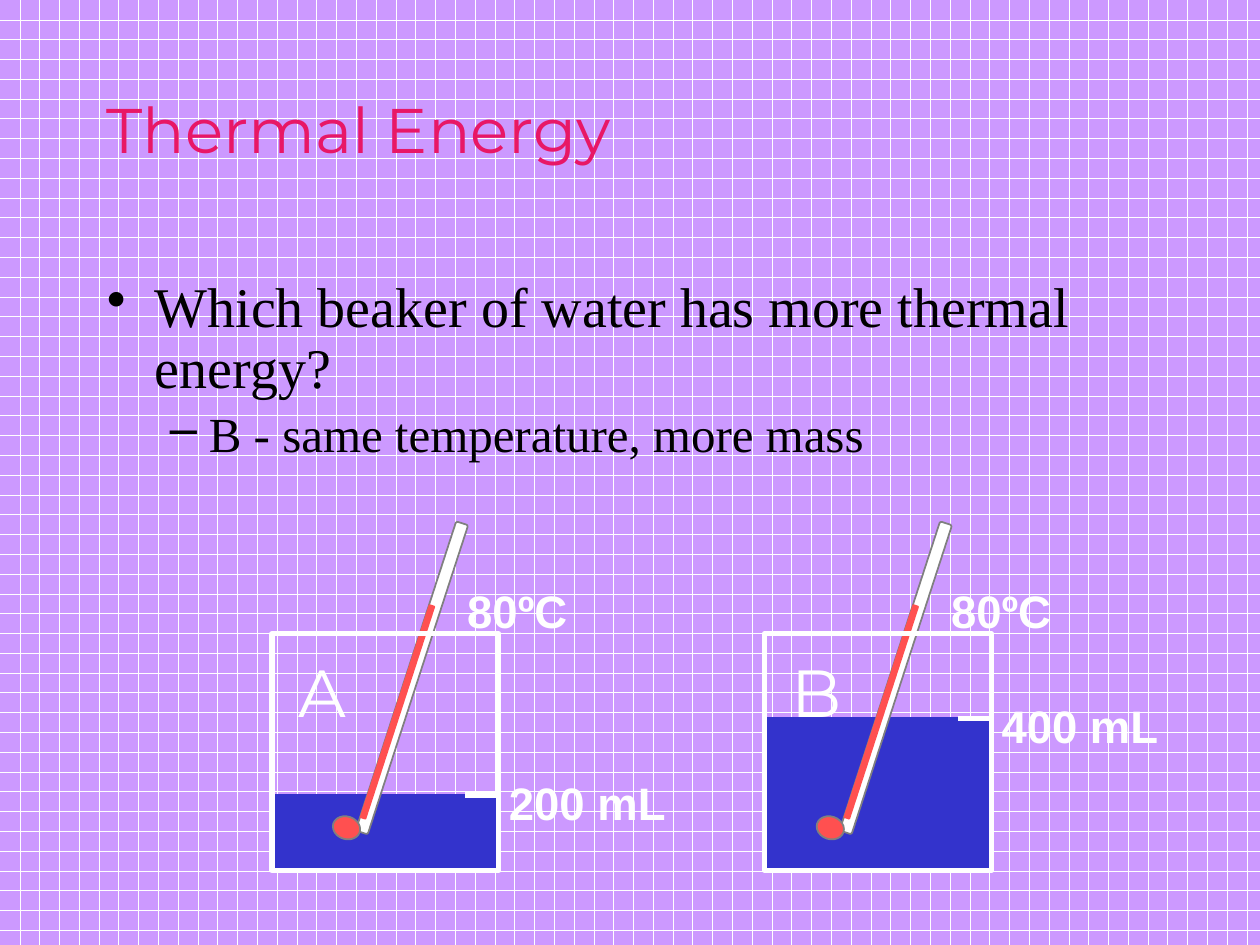
from dataclasses import dataclass

from lxml import etree
from pptx import Presentation
from pptx.dml.color import RGBColor
from pptx.enum.dml import MSO_PATTERN
from pptx.enum.shapes import MSO_CONNECTOR, MSO_SHAPE
from pptx.oxml.ns import qn
from pptx.util import Inches, Pt

RECT = MSO_SHAPE.RECTANGLE
ROUNDED = MSO_SHAPE.ROUNDED_RECTANGLE
OVAL = MSO_SHAPE.OVAL
STRAIGHT = MSO_CONNECTOR.STRAIGHT
DOT_GRID = MSO_PATTERN.DOTTED_GRID


@dataclass(frozen=True)
class Theme:
    paper: RGBColor = RGBColor.from_string("CC99FF")
    white: RGBColor = RGBColor.from_string("FFFFFF")
    black: RGBColor = RGBColor.from_string("000000")
    title: RGBColor = RGBColor.from_string("E81766")
    water: RGBColor = RGBColor.from_string("3333CC")
    mercury: RGBColor = RGBColor.from_string("FF5050")
    rim: RGBColor = RGBColor.from_string("808080")
    display_font: str = "Montserrat"
    body_font: str = "Times New Roman"
    label_font: str = "Arial"
    title_size: int = 36
    letter_size: int = 38
    question_size: int = 32
    answer_size: int = 28
    label_size: int = 26
    thin: int = 1
    thick: int = 3


THEME = Theme()
BEAKER_WIDTH, BEAKER_HEIGHT = 1.8, 1.88
TICK_LENGTH = 0.27
TILT = 288


def set_font(paragraph, name, size, color, bold=False):
    font = paragraph.font
    font.name, font.size, font.bold = name, Pt(size), bold
    font.color.rgb = color


def add_text(parent, box, text, name, size, color, bold=False):
    frame = parent.shapes.add_textbox(*map(Inches, box)).text_frame
    frame.word_wrap = False
    frame.text = text
    set_font(frame.paragraphs[0], name, size, color, bold)


def add_part(parent, kind, box, fill, line, width=THEME.thin, rotation=0):
    part = parent.shapes.add_shape(kind, *map(Inches, box))
    part.shadow.inherit = False
    part.rotation = rotation
    if fill is None:
        part.fill.background()
    else:
        part.fill.solid()
        part.fill.fore_color.rgb = fill
    part.line.color.rgb = line
    part.line.width = Pt(width)


def add_tick(parent, right, y):
    tick = parent.shapes.add_connector(
        STRAIGHT, Inches(right - TICK_LENGTH), Inches(y), Inches(right), Inches(y))
    tick.line.color.rgb = THEME.white
    tick.line.width = Pt(THEME.thick)
    etree.SubElement(tick.element.spPr, qn("a:effectLst"))


def add_bullets(slide, box, items):
    """Each item is text, bullet sign, left margin, hanging indent, size."""
    frame = slide.shapes.add_textbox(*map(Inches, box)).text_frame
    frame.word_wrap = True
    for level, (text, sign, margin, hanging, size) in enumerate(items):
        paragraph = frame.add_paragraph() if level else frame.paragraphs[0]
        paragraph.text = text
        paragraph.level = level
        paragraph.line_spacing = 0.9
        paragraph.space_before = Pt(0.2 * size)
        properties = paragraph._p.get_or_add_pPr()
        properties.set("marL", str(Inches(margin)))
        properties.set("indent", str(Inches(-hanging)))
        etree.SubElement(properties, qn("a:buChar"), char=sign)
        set_font(paragraph, THEME.body_font, size, THEME.black)


def add_thermometer(parent, left, top, reading):
    """The box is that of the glass tube before it is tilted."""
    add_part(parent, ROUNDED, (left, top, 2.58, 0.1), THEME.white, THEME.rim,
             rotation=TILT)
    add_part(parent, OVAL, (left + 0.68, top + 1.13, 0.18, 0.22), THEME.mercury,
             THEME.rim, rotation=TILT)
    add_part(parent, RECT, (left + 0.29, top + 0.3, 1.77, 0.04), THEME.mercury,
             THEME.mercury, rotation=TILT)
    add_text(parent, (left + 1.63, top - 0.75, 1, 0.54), reading,
             THEME.label_font, THEME.label_size, THEME.white, bold=True)


def add_beaker(slide, left, top, letter, volume, depth, thermometer_left):
    beaker = slide.shapes.add_group_shape()
    right = left + BEAKER_WIDTH
    surface = top + BEAKER_HEIGHT - depth
    add_part(beaker, RECT, (left, surface, BEAKER_WIDTH, depth), THEME.water, THEME.water)
    add_tick(beaker, right, surface)
    add_thermometer(beaker, thermometer_left, top + 0.3, "80ºC")
    add_part(beaker, RECT, (left, top, BEAKER_WIDTH, BEAKER_HEIGHT), None,
             THEME.white, THEME.thick)
    add_text(beaker, (right - 0.02, surface - 0.21, 1.45, 0.54), volume,
             THEME.label_font, THEME.label_size, THEME.white, bold=True)
    add_text(beaker, (left + 0.11, top + 0.09, 0.61, 0.73), letter,
             THEME.display_font, THEME.letter_size, THEME.white)


def set_background(slide):
    fill = slide.background.fill
    fill.patterned()
    fill.pattern = DOT_GRID
    fill.fore_color.rgb = THEME.white
    fill.back_color.rgb = THEME.paper


def main():
    deck = Presentation()
    deck.slide_width, deck.slide_height = Inches(10), Inches(7.5)
    slide = deck.slides.add_slide(deck.slide_layouts[6])
    set_background(slide)
    add_bullets(slide, (0.75, 2.17, 8.5, 1.67), [
        ("Which beaker of water has more thermal energy?", "•", 0.38, 0.38,
         THEME.question_size),
        ("B - same temperature, more mass", "–", 0.81, 0.31, THEME.answer_size),
    ])
    add_beaker(slide, 2.16, 5.03, "A", "200 mL", 0.6, 1.98)
    add_beaker(slide, 6.07, 5.03, "B", "400 mL", 1.21, 5.82)
    add_text(slide, (0.75, 0.67, 8.5, 1.25), "Thermal Energy",
             THEME.display_font, THEME.title_size, THEME.title)
    deck.save("out.pptx")


if __name__ == "__main__":
    main()
